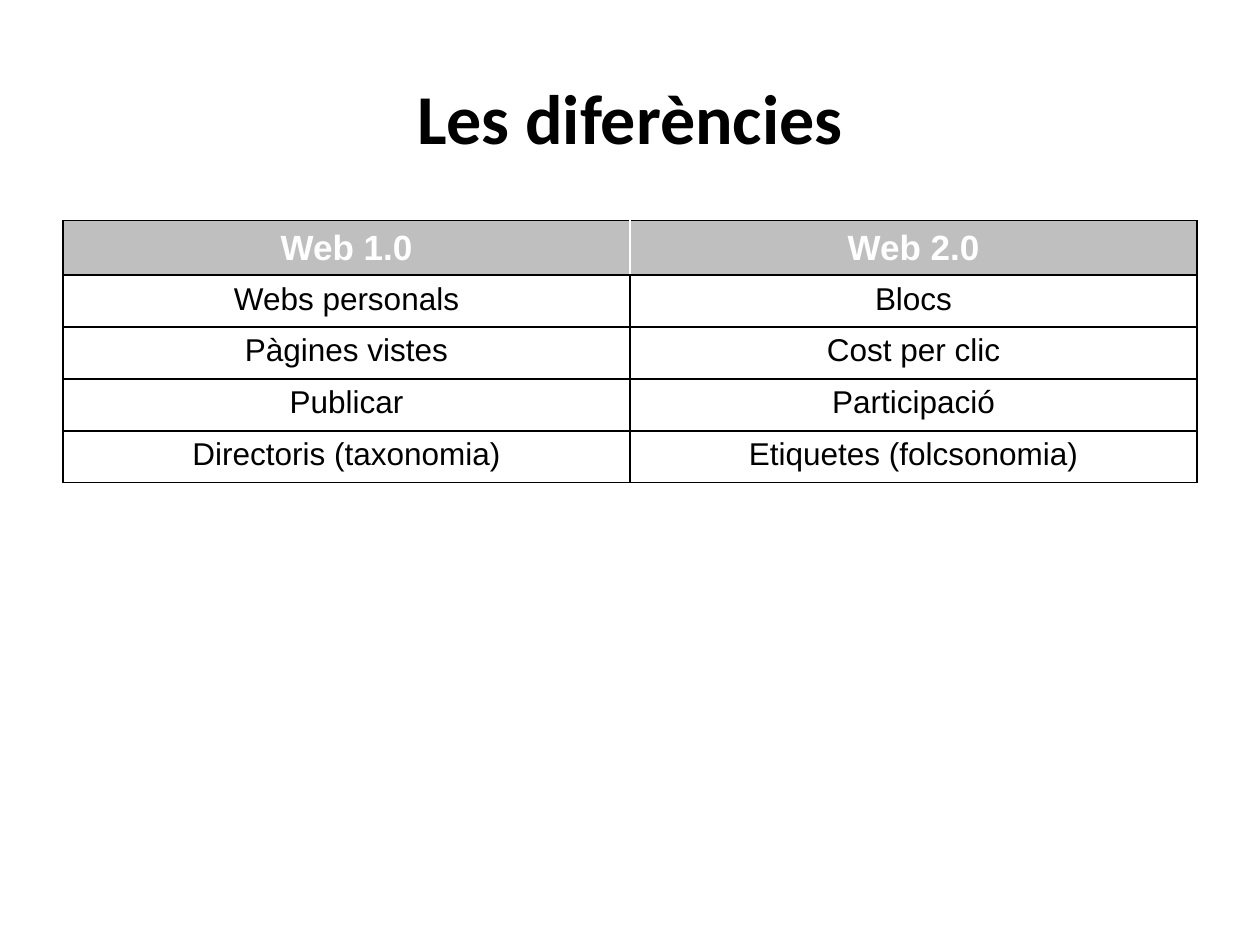
from lxml import etree
from pptx import Presentation
from pptx import util as u
from pptx.dml.color import RGBColor
from pptx.enum import text
from pptx.oxml.ns import qn

# Content
TITLE = "Les diferències"
ROWS = [
    ("Web 1.0", "Web 2.0"),
    ("Webs personals", "Blocs"),
    ("Pàgines vistes", "Cost per clic"),
    ("Publicar", "Participació"),
    ("Directoris (taxonomia)", "Etiquetes (folcsonomia)"),
]
BLACK, WHITE, GREY = "000000", "FFFFFF", "BFBFBF"
LEFT, WIDTH, HIGH = 0.5, 9, 2.06


def color(code):
    return RGBColor.from_string(code)


def style(frame, font, size, code, bold):
    para = frame.paragraphs[0]
    para.alignment = text.PP_ALIGN.CENTER
    face = para.runs[0].font
    face.name, face.size, face.bold = font, u.Pt(size), bold
    face.color.rgb = color(code)


def border(cell, side, code):
    line = etree.SubElement(cell._tc.get_or_add_tcPr(), qn("a:ln" + side),
                            w=str(u.Pt(1)))
    fill = etree.SubElement(line, qn("a:solidFill"))
    etree.SubElement(fill, qn("a:srgbClr"), val=code)


deck = Presentation()
deck.slide_width, deck.slide_height = u.Inches(10), u.Inches(7.5)
slide = deck.slides.add_slide(deck.slide_layouts[6])

# Title
box = slide.shapes.add_textbox(u.Inches(LEFT), u.Inches(0.3),
                               u.Inches(WIDTH), u.Inches(1.25))
frame = box.text_frame
frame.word_wrap = True
frame.vertical_anchor = text.MSO_ANCHOR.MIDDLE
frame.text = TITLE
style(frame, "Calibri", 40, BLACK, True)

# Table: grey header with a white divider, white body
table = slide.shapes.add_table(
    len(ROWS), len(ROWS[0]), u.Inches(LEFT), u.Inches(1.75),
    u.Inches(WIDTH), u.Inches(HIGH)).table
table.horz_banding = False
for r, row in enumerate(ROWS):
    head = r == 0
    for c, label in enumerate(row):
        cell = table.cell(r, c)
        inner = "R" if c == 0 else "L"
        for side in "LRTB":
            border(cell, side, WHITE if head and side == inner else BLACK)
        cell.fill.solid()
        cell.fill.fore_color.rgb = color(GREY if head else WHITE)
        cell.vertical_anchor = (text.MSO_ANCHOR.MIDDLE if head
                                else text.MSO_ANCHOR.TOP)
        cell.text_frame.text = label
        style(cell.text_frame, "Arial", 20 if head else 18,
              WHITE if head else BLACK, head)

deck.save("out.pptx")
